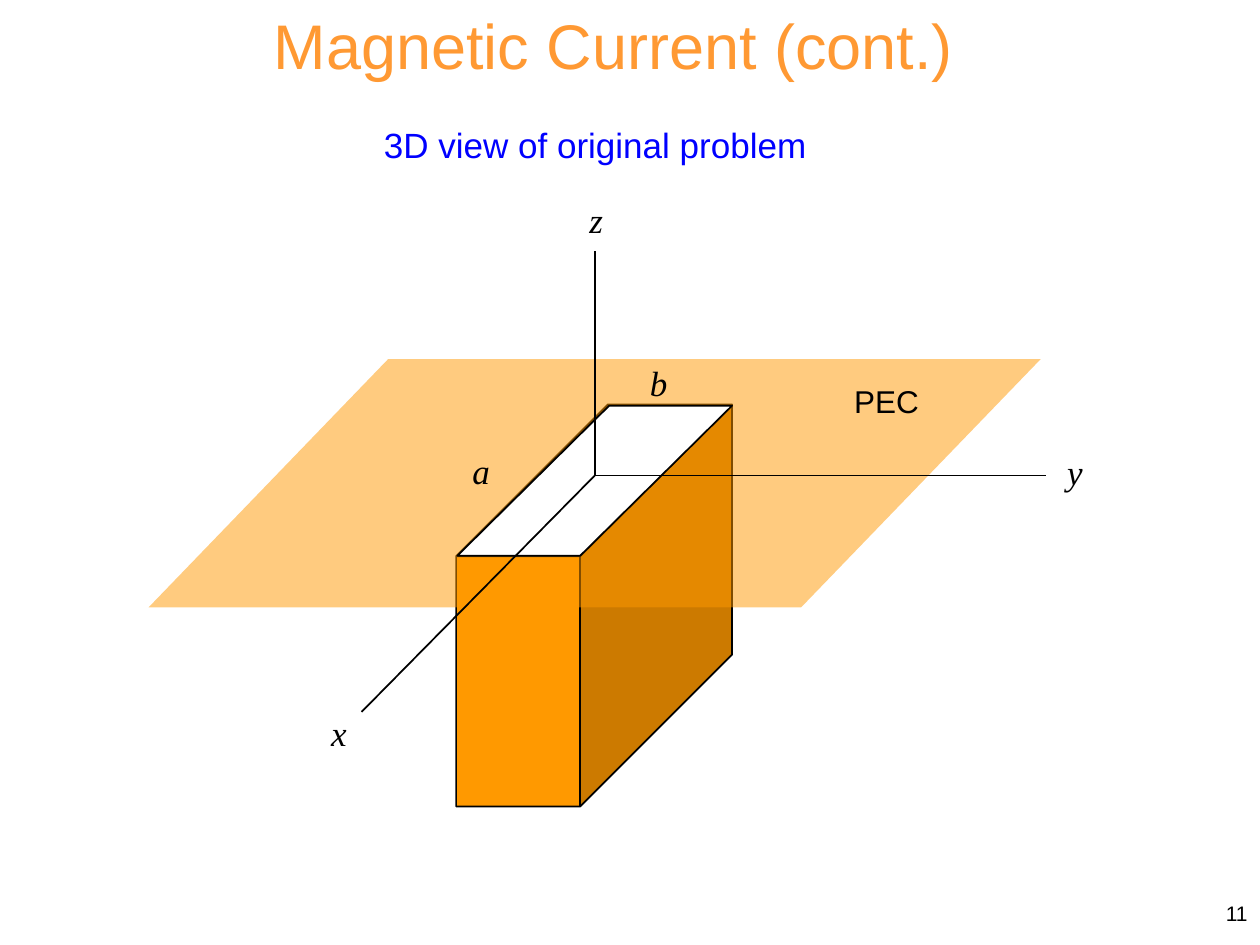
"""Build a slide with a 3D view of a waveguide that opens through a PEC plane."""
from dataclasses import dataclass

import pptx
import pptx.dml.color
import pptx.enum.shapes
import pptx.enum.text
import pptx.oxml
import pptx.oxml.ns
import pptx.util

COLUMNS, ROWS = 100, 75
CELL = pptx.util.Inches(0.1)
COLORS = {"title": "FF9933", "subtitle": "0000FF", "ink": "000000", "metal": "FF9900", "opening": "FFFFFF"}
SHAPE = pptx.enum.shapes.MSO_SHAPE
ALIGN = pptx.enum.text.PP_ALIGN
ANCHOR = pptx.enum.text.MSO_ANCHOR


@dataclass(frozen=True)
class Area:
    column: float
    row: float
    columns: float
    rows: float

    def lengths(self) -> list[int]:
        return [cells(value) for value in (self.column, self.row, self.columns, self.rows)]


@dataclass(frozen=True)
class Solid:
    kind: int
    area: Area
    slant: float
    fill: str
    opacity: int = 100
    outlined: bool = True


@dataclass(frozen=True)
class Axis:
    name: str
    end: tuple[float, float]
    label: tuple[float, float]


ORIGIN = (47.2, 37.75)
SOLIDS = [
    Solid(SHAPE.CUBE, Area(36.2, 32.1, 21.9, 31.9), 0.55, "metal"),
    Solid(SHAPE.PARALLELOGRAM, Area(11.8, 28.5, 70.8, 19.7), 0.965, "metal", 50, False),
    Solid(SHAPE.PARALLELOGRAM, Area(36.3, 32.2, 21.8, 11.9), 1.012, "opening"),
]
AXES = [
    Axis("y", (83, 37.75), (83.7, 35.3)),
    Axis("x", (28.7, 56.5), (25.3, 56)),
    Axis("z", (47.2, 19.9), (45.8, 15.3)),
]
SIDES = {"a": (36.5, 35.2), "b": (50.6, 28.2)}


def cells(count: float) -> int:
    return round(count * CELL)


def color(name: str) -> pptx.dml.color.RGBColor:
    return pptx.dml.color.RGBColor.from_string(COLORS[name])


def write(box, text: str, *, size: int, ink: str = "ink", font: str = "Arial", italic: bool = False,
          align=ALIGN.LEFT, anchor=ANCHOR.TOP, wrap: bool = True) -> None:
    frame = box.text_frame
    frame.word_wrap = wrap
    frame.auto_size = pptx.enum.text.MSO_AUTO_SIZE.NONE
    frame.vertical_anchor = anchor
    para = frame.paragraphs[0]
    para.alignment = align
    span = para.add_run()
    span.text = text
    span.font.name = font
    span.font.size = pptx.util.Pt(size)
    span.font.italic = italic
    span.font.color.rgb = color(ink)


def add_text(page, text: str, area: Area, **style) -> None:
    write(page.shapes.add_textbox(*area.lengths()), text, **style)


def add_symbol(page, text: str, place: tuple[float, float]) -> None:
    add_text(page, text, Area(*place, 7.8, 4.3), size=20, font="Times New Roman", italic=True)


def add_title(page, text: str, area: Area) -> None:
    title = page.shapes.title
    title.left, title.top, title.width, title.height = area.lengths()
    write(title, text, size=36, ink="title", align=ALIGN.CENTER)


def add_solid(page, solid: Solid) -> None:
    shape = page.shapes.add_shape(solid.kind, *solid.area.lengths())
    shape.shadow.inherit = False
    shape.adjustments[0] = solid.slant
    shape.fill.solid()
    shape.fill.fore_color.rgb = color(solid.fill)
    if solid.opacity < 100:
        tint = shape.fill._xPr.find(".//" + pptx.oxml.ns.qn("a:srgbClr"))
        alpha = pptx.oxml.parse_xml(f'<a:alpha {pptx.oxml.ns.nsdecls("a")} val="{solid.opacity * 1000}"/>')
        tint.append(alpha)
    if solid.outlined:
        shape.line.color.rgb = color("ink")
        shape.line.width = pptx.util.Pt(1)
    else:
        shape.line.fill.background()


def add_axis(page, axis: Axis) -> None:
    ends = [cells(value) for value in (*ORIGIN, *axis.end)]
    line = page.shapes.add_connector(pptx.enum.shapes.MSO_CONNECTOR.STRAIGHT, *ends)
    line.line.color.rgb = color("ink")
    line.line.width = pptx.util.Pt(1)
    line._element.spPr.append(pptx.oxml.parse_xml(f'<a:effectLst {pptx.oxml.ns.nsdecls("a")}/>'))
    add_symbol(page, axis.name, axis.label)


def main() -> None:
    deck = pptx.Presentation()
    deck.slide_width, deck.slide_height = cells(COLUMNS), cells(ROWS)
    page = deck.slides.add_slide(deck.slide_layouts.get_by_name("Title Only"))
    add_title(page, "Magnetic Current (cont.)", Area(11.9, 0, 73.6, 7))
    add_text(page, "3D view of original problem", Area(29.3, 9.3, 35.9, 4.4),
             size=20, ink="subtitle", align=ALIGN.CENTER, wrap=False)
    for solid in SOLIDS:
        add_solid(page, solid)
    for axis in AXES:
        add_axis(page, axis)
    for name, place in SIDES.items():
        add_symbol(page, name, place)
    add_text(page, "PEC", Area(66.8, 29.8, 7.2, 4), size=18, wrap=False)
    add_text(page, "11", Area(79.2, 70, 20.8, 5), size=12, align=ALIGN.RIGHT, anchor=ANCHOR.MIDDLE)
    deck.save("out.pptx")


if __name__ == "__main__":
    main()
